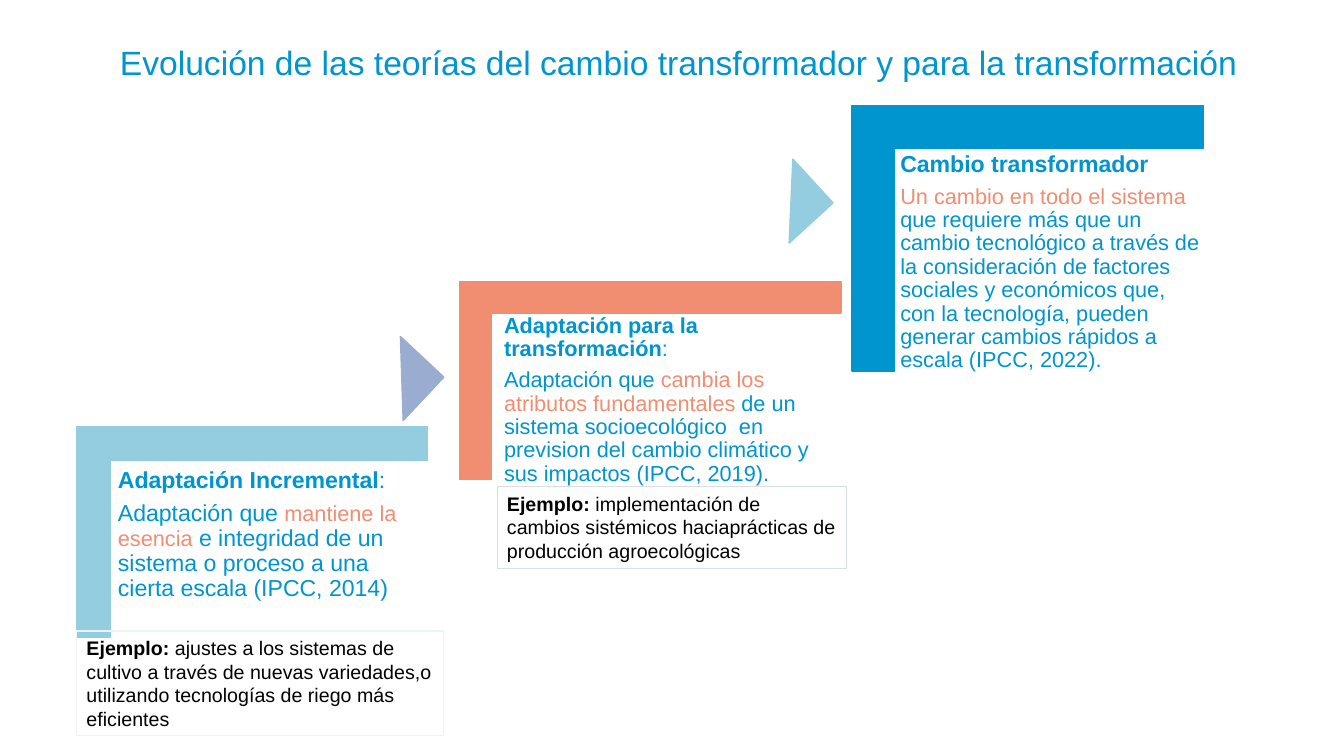
from dataclasses import dataclass

from pptx import Presentation
from pptx.dml.color import RGBColor
from pptx.enum.shapes import MSO_SHAPE
from pptx.enum.text import MSO_ANCHOR, MSO_AUTO_SIZE, PP_ALIGN
from pptx.util import Inches, Pt

CORNER = MSO_SHAPE.CORNER
TRIANGLE = MSO_SHAPE.ISOSCELES_TRIANGLE
LEFT = PP_ALIGN.LEFT
TOP, BOTTOM = MSO_ANCHOR.TOP, MSO_ANCHOR.BOTTOM
FIT_SHAPE, NO_FIT = MSO_AUTO_SIZE.SHAPE_TO_FIT_TEXT, MSO_AUTO_SIZE.NONE
TITLE_ONLY = 5


@dataclass(frozen=True)
class Theme:
    font: str = "Arial"
    background: str = "FEFFFE"
    blue: str = "0095CE"
    sky: str = "93CDDF"
    coral: str = "F18D70"
    lilac: str = "9AACCF"
    black: str = "000000"
    pale_sky: str = "E9F5F9"
    pale_lilac: str = "D7DEEC"
    title: float = 24
    large: float = 16.5
    medium: float = 15.5
    example: float = 14
    line_spacing: float = 0.9
    gap_ratio: float = 0.35
    panel_inset: float = 0.07
    bend: float = 0.161
    arrow_side: float = 0.59


THEME = Theme()

STEPS = [
    {
        "box": (0.76, 4.23, 3.48, 2.09),
        "color": THEME.sky,
        "panel": (0.34, 0.35, 3.14, 1.9),
        "paragraphs": [
            [("Adaptación Incremental", THEME.large, THEME.blue, True),
             (":", THEME.large, THEME.blue, False)],
            [("Adaptación que ", THEME.large, THEME.blue, False),
             ("mantiene la esencia", THEME.medium, THEME.coral, False),
             (" e integridad de un sistema o proceso a una cierta escala (IPCC, 2014)",
              THEME.large, THEME.blue, False)],
        ],
        "arrow": (2.93, -0.77, 313.1, THEME.lilac),
        "example": (0, 2.03, 3.64, 1.04, THEME.pale_sky, 1,
                    "ajustes a los sistemas de cultivo a través de nuevas variedades,o "
                    "utilizando tecnologías de riego más eficientes"),
    },
    {
        "box": (4.56, 2.79, 3.78, 1.97),
        "color": THEME.coral,
        "panel": (0.37, 0.26, 3.46, 2.67),
        "paragraphs": [
            [("Adaptación para la transformación", THEME.medium, THEME.blue, True),
             (":", THEME.medium, THEME.blue, False)],
            [("Adaptación que ", THEME.medium, THEME.blue, False),
             ("cambia los atributos fundamentales ", THEME.medium, THEME.coral, False),
             ("de un sistema socioecológico  en prevision del cambio climático y "
              "sus impactos (IPCC, 2019).", THEME.medium, THEME.blue, False)],
        ],
        "arrow": (2.99, -1.09, 317.5, THEME.sky),
        "example": (0.37, 2.04, 3.47, 0.81, THEME.pale_lilac, 0.75,
                    "implementación de cambios sistémicos haciaprácticas de "
                    "producción agroecológicas"),
    },
    {
        "box": (8.45, 1.05, 3.48, 2.63),
        "color": THEME.blue,
        "panel": (0.41, 0.39, 3.14, 2.75),
        "paragraphs": [
            [("Cambio transformador", THEME.large, THEME.blue, True)],
            [("Un cambio en todo el sistema ", THEME.medium, THEME.coral, False),
             ("que requiere más que un cambio tecnológico a través de la consideración "
              "de factores sociales y económicos que, con la tecnología, pueden generar "
              "cambios rápidos a escala (IPCC, 2022).", THEME.medium, THEME.blue, False)],
        ],
    },
]


def apply(target, values):
    for name, value in values.items():
        setattr(target, name, value)


def inches(*lengths):
    return [Inches(length) for length in lengths]


def write_runs(paragraph, runs):
    for text, size, color, bold in runs:
        run = paragraph.add_run()
        run.text = text
        apply(run.font, {"name": THEME.font, "size": Pt(size), "bold": bold})
        run.font.color.rgb = RGBColor.from_string(color)


def paint(shape, color):
    shape.shadow.inherit = False
    shape.fill.solid()
    shape.fill.fore_color.rgb = RGBColor.from_string(color)
    shape.line.color.rgb = RGBColor.from_string(color)
    shape.line.width = Pt(1)


def add_title(slide, left, top, width, height):
    title = slide.shapes.title
    apply(title, dict(zip(("left", "top", "width", "height"),
                          inches(left, top, width, height))))
    apply(title.text_frame, {"word_wrap": True, "auto_size": NO_FIT,
                             "vertical_anchor": BOTTOM})
    heading = title.text_frame.paragraphs[0]
    apply(heading, {"alignment": LEFT, "line_spacing": THEME.line_spacing})
    write_runs(heading, [("Evolución de las teorías del cambio transformador y para la "
                          "transformación", THEME.title, THEME.blue, False)])


def add_corner(slide, left, top, width, height, color):
    shift = (width - height) / 2
    corner = slide.shapes.add_shape(
        CORNER, *inches(left + shift, top - shift, height, width))
    corner.rotation = 90
    for index in range(2):
        corner.adjustments[index] = THEME.bend
    paint(corner, color)


def add_panel(slide, left, top, width, height, paragraphs):
    frame = slide.shapes.add_textbox(*inches(left, top, width, height)).text_frame
    inset = Inches(THEME.panel_inset)
    apply(frame, {"word_wrap": True, "auto_size": NO_FIT, "vertical_anchor": TOP,
                  "margin_left": inset, "margin_right": inset,
                  "margin_top": inset, "margin_bottom": inset})
    for index, runs in enumerate(paragraphs):
        paragraph = frame.add_paragraph() if index else frame.paragraphs[0]
        apply(paragraph, {"line_spacing": THEME.line_spacing,
                          "space_after": Pt(round(THEME.gap_ratio * runs[0][1], 1))})
        write_runs(paragraph, runs)


def add_arrow(slide, left, top, angle, color):
    side = THEME.arrow_side
    arrow = slide.shapes.add_shape(TRIANGLE, *inches(left, top, side, side))
    arrow.adjustments[0] = 1
    arrow.rotation = angle
    paint(arrow, color)


def add_example(slide, left, top, width, height, color, weight, text):
    example = slide.shapes.add_textbox(*inches(left, top, width, height))
    example.line.color.rgb = RGBColor.from_string(color)
    example.line.width = Pt(weight)
    apply(example.text_frame, {"word_wrap": True, "auto_size": FIT_SHAPE})
    write_runs(example.text_frame.paragraphs[0],
               [("Ejemplo: ", THEME.example, THEME.black, True),
                (text, THEME.example, THEME.black, False)])


def add_step(slide, step):
    left, top, width, height = step["box"]
    add_corner(slide, left, top, width, height, step["color"])
    parts = (("panel", add_panel, [step["paragraphs"]]),
             ("arrow", add_arrow, []),
             ("example", add_example, []))
    for part, add_part, extra in parts:
        if part in step:
            across, down, *rest = step[part]
            add_part(slide, left + across, top + down, *rest, *extra)


def main():
    deck = Presentation()
    apply(deck, {"slide_width": Inches(13.33), "slide_height": Inches(7.5)})
    slide = deck.slides.add_slide(deck.slide_layouts[TITLE_ONLY])
    slide.background.fill.solid()
    slide.background.fill.fore_color.rgb = RGBColor.from_string(THEME.background)
    add_title(slide, 1.09, 0.22, 11.5, 0.65)
    for step in STEPS:
        add_step(slide, step)
    deck.save("out.pptx")


if __name__ == "__main__":
    main()
